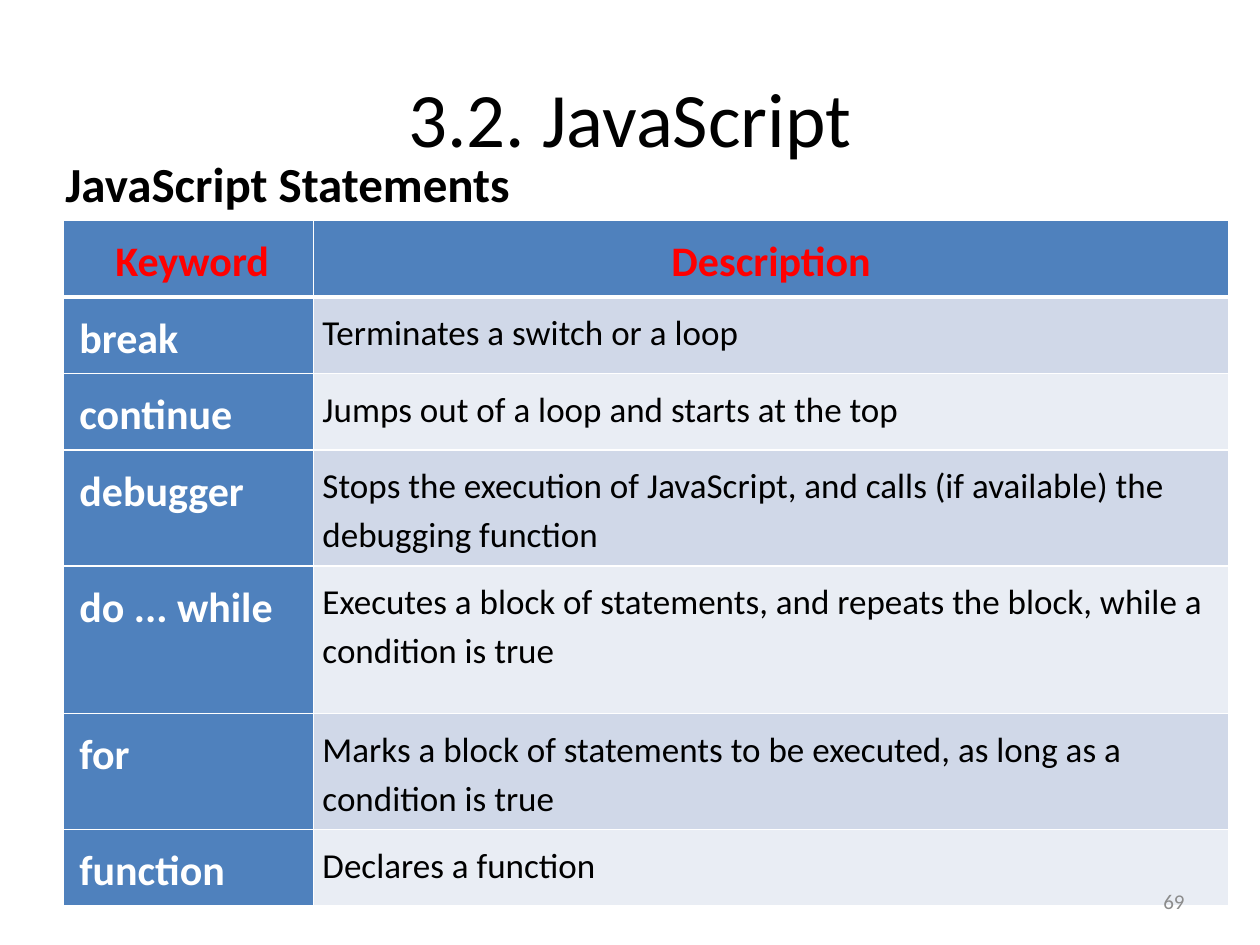
from lxml import etree
from pptx import Presentation
from pptx.dml.color import RGBColor
from pptx.enum.text import MSO_ANCHOR, MSO_AUTO_SIZE, PP_ALIGN
from pptx.oxml.ns import qn
from pptx.util import Inches, Pt

LEFT, CENTER, RIGHT = PP_ALIGN.LEFT, PP_ALIGN.CENTER, PP_ALIGN.RIGHT
TOP, MIDDLE = MSO_ANCHOR.TOP, MSO_ANCHOR.MIDDLE
NO_FIT, GROW = MSO_AUTO_SIZE.NONE, MSO_AUTO_SIZE.SHAPE_TO_FIT_TEXT

THEME = {
    "font": "Calibri",
    "white": "FFFFFF",
    "accent": "4F81BD",
    "bands": ("D0D8E8", "E9EDF4"),
    "title": {"size": 44, "bold": False, "color": "000000"},
    "subtitle": {"size": 28, "bold": True, "color": "000000"},
    "header": {"size": 24, "bold": True, "color": "FF0000"},
    "keyword": {"size": 24, "bold": True, "color": "FFFFFF"},
    "description": {"size": 20, "bold": False, "color": "000000"},
    "number": {"size": 12, "bold": False, "color": "8C8C8C"},
}

ROWS = [
    ("Keyword", "Description", 0.55),
    ("break", "Terminates a switch or a loop", 0.55),
    ("continue", "Jumps out of a loop and starts at the top", 0.55),
    ("debugger", "Stops the execution of JavaScript, and calls (if available) the debugging function", 0.86),
    ("do ... while", "Executes a block of statements, and repeats the block, while a condition is true", 1.17),
    ("for", "Marks a block of statements to be executed, as long as a condition is true", 0.86),
    ("function", "Declares a function", 0.55),
]
COLUMN_WIDTHS = (1.99, 7.26)


def write_text(frame, text, style, align=LEFT, line_spacing=None):
    para = frame.paragraphs[0]
    para.alignment = align
    para.line_spacing = line_spacing
    span = para.add_run()
    span.text = text
    look = THEME[style]
    values = {"name": THEME["font"], "size": Pt(look["size"]), "bold": look["bold"]}
    for name, value in values.items():
        setattr(span.font, name, value)
    span.font.color.rgb = RGBColor.from_string(look["color"])


def set_borders(cell, widths):
    properties = cell._tc.get_or_add_tcPr()
    for index, (side, width) in enumerate(widths.items()):
        line = etree.Element(qn(f"a:{side}"), w=str(Pt(width)))
        fill = etree.SubElement(line, qn("a:solidFill"))
        etree.SubElement(fill, qn("a:srgbClr"), val=THEME["white"])
        properties.insert(index, line)


deck = Presentation()
deck.slide_width, deck.slide_height = Inches(10), Inches(7.5)
page = deck.slides.add_slide(deck.slide_layouts[5])

title = page.shapes.title
place = {"left": 0.5, "top": 0.3, "width": 9, "height": 1.25}
for name, value in place.items():
    setattr(title, name, Inches(value))
title.text_frame.vertical_anchor = MIDDLE
write_text(title.text_frame, "3.2. JavaScript", "title", CENTER)

table_height = sum(height for _, _, height in ROWS)
table = page.shapes.add_table(
    len(ROWS), len(COLUMN_WIDTHS), Inches(0.5), Inches(1.75),
    Inches(sum(COLUMN_WIDTHS)), Inches(table_height),
).table
for column, width in zip(table.columns, COLUMN_WIDTHS):
    column.width = Inches(width)

for row_index, (keyword, description, height) in enumerate(ROWS):
    table.rows[row_index].height = Inches(height)
    is_header = row_index == 0
    for column_index, text in enumerate((keyword, description)):
        cell = table.cell(row_index, column_index)
        is_keyword = column_index == 0
        margins = {"left": 0.13 if is_keyword else 0.07, "top": 0.07, "right": 0.07, "bottom": 0.07}
        for side, value in margins.items():
            setattr(cell, f"margin_{side}", Inches(value))
        style = "header" if is_header else "keyword" if is_keyword else "description"
        write_text(cell.text_frame, text, style, CENTER if is_header else LEFT, 1.15)
        color = THEME["accent"] if is_header or is_keyword else THEME["bands"][(row_index - 1) % 2]
        cell.fill.solid()
        cell.fill.fore_color.rgb = RGBColor.from_string(color)
        set_borders(cell, {
            "lnL": 1, "lnR": 1,
            "lnT": 3 if row_index == 1 else 1,
            "lnB": 3 if is_header else 1,
        })

LABELS = [
    ("69", "number", (7.17, 6.95, 2.33, 0.4), RIGHT, MIDDLE, NO_FIT),
    ("JavaScript Statements", "subtitle", (0.42, 1.17, 4, 0.57), LEFT, TOP, GROW),
]
for text, style, bounds, align, anchor, fit in LABELS:
    frame = page.shapes.add_textbox(*map(Inches, bounds)).text_frame
    settings = {"word_wrap": True, "vertical_anchor": anchor, "auto_size": fit}
    for name, value in settings.items():
        setattr(frame, name, value)
    write_text(frame, text, style, align)

deck.save("out.pptx")
